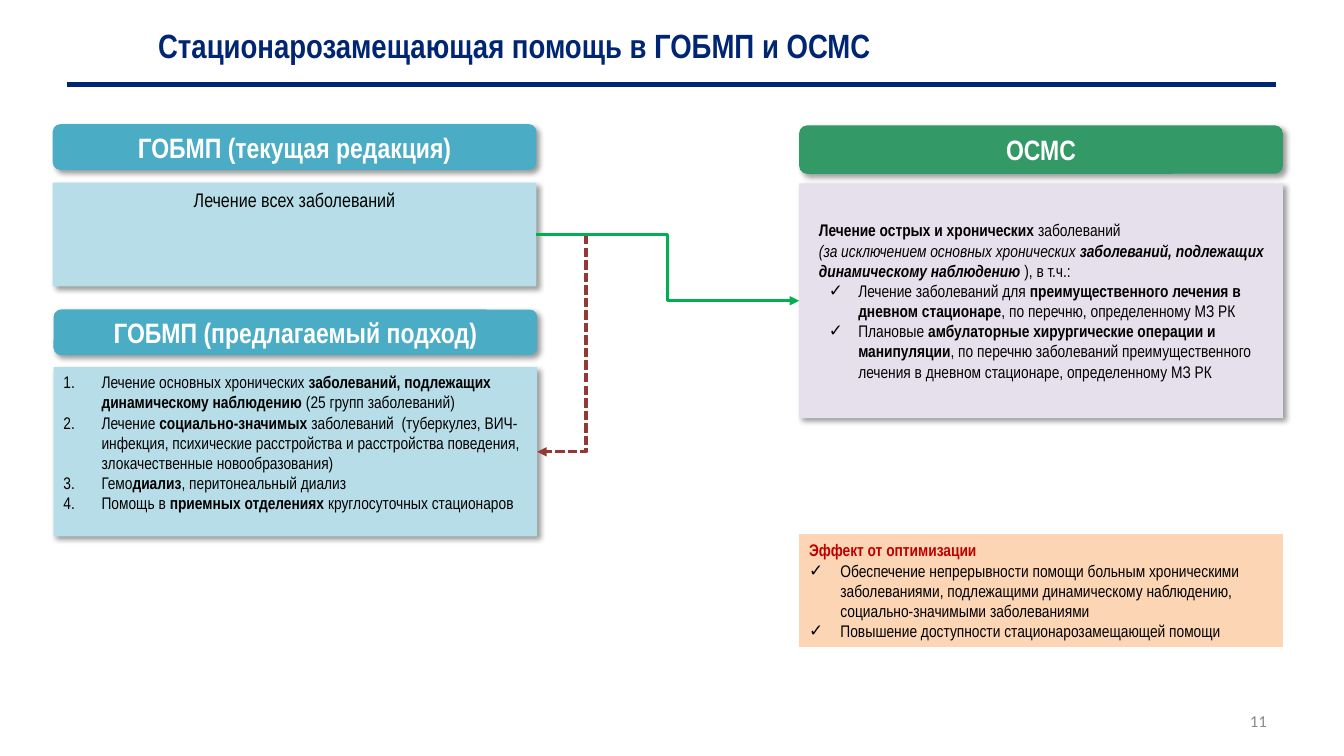
from lxml import etree
from pptx import Presentation
from pptx.dml.color import RGBColor
from pptx.enum.dml import MSO_LINE
from pptx.enum.shapes import MSO_CONNECTOR, MSO_SHAPE
from pptx.enum.text import MSO_ANCHOR, MSO_AUTO_SIZE, PP_ALIGN
from pptx.oxml.ns import qn
from pptx.util import Cm, Pt

RECT, ROUNDED = MSO_SHAPE.RECTANGLE, MSO_SHAPE.ROUNDED_RECTANGLE
STRAIGHT, ELBOW = MSO_CONNECTOR.STRAIGHT, MSO_CONNECTOR.ELBOW
TOP, MIDDLE = MSO_ANCHOR.TOP, MSO_ANCHOR.MIDDLE
LEFT, CENTER, RIGHT = PP_ALIGN.LEFT, PP_ALIGN.CENTER, PP_ALIGN.RIGHT
DASHED = MSO_LINE.SQUARE_DOT
LEFT_SIDE, RIGHT_SIDE = 1, 3

FONT = "Arial Narrow"
COLORS = {
    "navy": "002673", "teal": "4BACC6", "pale_teal": "B7DEE8",
    "green": "339966", "lilac": "E6E0EC", "peach": "FCD5B5",
    "arrow_green": "00B050", "arrow_brown": "953735", "red": "C00000",
    "white": "FFFFFF", "black": "000000", "gray": "8C8C8C",
}
COLUMN_WIDTH = 12.19
CURRENT_X, PROPOSED_X, INSURANCE_X = 1.33, 1.35, 20.14

# Paragraphs: (bullet, left indent and first-line indent in cm, spans).
# Spans: (text, style), where the style letters are b for bold and i for italic.
PROPOSED = [("number", 0.96, -0.96, spans) for spans in (
    [("Лечение основных хронических", ""),
     (" заболеваний, подлежащих динамическому наблюдению ", "b"),
     ("(25 групп заболеваний)", "")],
    [("Лечение ", ""), ("социально-значимых ", "b"),
     ("заболеваний  (туберкулез, ВИЧ-инфекция, психические расстройства и "
      "расстройства поведения, злокачественные новообразования)", "")],
    [("Гемо", ""), ("диализ", "b"), (", перитонеальный диализ", "")],
    [("Помощь в ", ""), ("приемных отделениях ", "b"),
     ("круглосуточных стационаров", "")],
)]
INSURANCE = [
    (None, 0.25, 0, [("Лечение острых и хронических ", "b"), ("заболеваний", "")]),
    (None, 0.25, 0, [
        ("(за исключением основных хронических", "i"),
        (" заболеваний, подлежащих динамическому наблюдению ", "bi"),
        ("), в т.ч.:", "")]),
    ("check", 1.24, -0.74, [
        ("Лечение заболеваний для ", ""),
        ("преимущественного лечения в дневном стационаре", "b"),
        (", по перечню, определенному МЗ РК", "")]),
    ("check", 1.24, -0.74, [
        ("Плановые ", ""),
        ("амбулаторные хирургические операции и манипуляции", "b"),
        (", по перечню заболеваний преимущественного лечения в дневном "
         "стационаре, определенному МЗ РК", "")]),
]
EFFECT = [
    (None, 0, 0, [("Эффект от оптимизации", "br")]),
    ("check", 0.79, -0.79, [
        ("Обеспечение непрерывности помощи больным хроническими заболеваниями, "
         "подлежащими динамическому наблюдению, социально-значимыми "
         "заболеваниями", "")]),
    ("check", 0.79, -0.79, [
        ("Повышение доступности стационарозамещающей помощи", "")]),
]


def rgb(name):
    return RGBColor.from_string(COLORS[name])


def add_xml(parent, tag, **attributes):
    return etree.SubElement(parent, qn(tag), attributes)


def plain(text, style=""):
    return [(None, 0, 0, [(text, style)])]


def set_bullet(para, kind, left, first):
    properties = para._p.get_or_add_pPr()
    properties.set("marL", str(Cm(left)))
    properties.set("indent", str(Cm(first)))
    if kind == "number":
        add_xml(properties, "a:buFont", typeface="+mj-lt")
        add_xml(properties, "a:buAutoNum", type="arabicPeriod")
    elif kind == "check":
        add_xml(properties, "a:buFont", typeface="Arial")
        add_xml(properties, "a:buChar", char="✓")
    else:
        add_xml(properties, "a:buNone")


def write(box, paragraphs, size, color="black", align=LEFT, anchor=MIDDLE, font=FONT):
    """Fill a box with formatted paragraphs; style letter r makes a span red."""
    frame = box.text_frame
    frame_format = {"word_wrap": True, "auto_size": MSO_AUTO_SIZE.NONE,
                    "vertical_anchor": anchor}
    for name, value in frame_format.items():
        setattr(frame, name, value)
    for index, (kind, left, first, spans) in enumerate(paragraphs):
        para = frame.add_paragraph() if index else frame.paragraphs[0]
        para.alignment = align
        set_bullet(para, kind, left, first)
        for text, style in spans:
            span = para.add_run()
            span.text = text
            span_format = {"name": font, "size": Pt(size),
                           "bold": "b" in style, "italic": "i" in style}
            for name, value in span_format.items():
                setattr(span.font, name, value)
            span.font.color.rgb = rgb("red" if "r" in style else color)


def add_shadow(box):
    effects = add_xml(box._element.spPr, "a:effectLst")
    shadow = add_xml(effects, "a:outerShdw", blurRad=str(Pt(4)), dist=str(Pt(3)),
                     dir="2700000", algn="tl", rotWithShape="0")
    shade = add_xml(shadow, "a:srgbClr", val=COLORS["black"])
    add_xml(shade, "a:alpha", val="40000")


def add_panel(page, kind, left, top, height, fill, shadow=True):
    box = page.shapes.add_shape(kind, Cm(left), Cm(top), Cm(COLUMN_WIDTH), Cm(height))
    box.fill.solid()
    box.fill.fore_color.rgb = rgb(fill)
    box.line.fill.background()
    if shadow:
        add_shadow(box)
    else:
        box.shadow.inherit = False
    return box


def add_header(page, text, left, top, height, fill):
    box = add_panel(page, ROUNDED, left, top, height, fill)
    write(box, plain(text, "b"), 20, "white", CENTER)


def add_line(page, kind, ends, color, width, dash=None):
    line = page.shapes.add_connector(kind, *(Cm(value) for value in ends))
    line.line.color.rgb = rgb(color)
    line.line.width = Pt(width)
    line.line.dash_style = dash
    add_xml(line._element.spPr, "a:effectLst")
    return line


def add_arrow(page, source, target, side, bend, color, dash=None):
    """Join two boxes with an elbow arrow that turns bend cm from its start."""
    arrow = add_line(page, ELBOW, (0, 0, 1, 1), color, 2.25, dash)
    arrow.begin_connect(source, RIGHT_SIDE)
    arrow.end_connect(target, side)
    add_xml(arrow.line._get_or_add_ln(), "a:tailEnd", type="triangle")
    guides = arrow._element.spPr.find(qn("a:prstGeom")).get_or_add_avLst()
    ratio = round(Cm(bend) / arrow.width * 100000)
    add_xml(guides, "a:gd", name="adj1", fmla=f"val {ratio}")


def add_title(page, text):
    title = page.shapes.title
    place = {"left": Cm(3.73), "top": Cm(0.36), "width": Cm(22), "height": Cm(1.55)}
    for name, value in place.items():
        setattr(title, name, value)
    write(title, plain(text, "b"), 24, "navy")
    add_line(page, STRAIGHT, (1.68, 2.13, 32.16, 2.13), "navy", 3)


def main():
    deck = Presentation()
    deck.slide_width, deck.slide_height = Cm(33.87), Cm(19.05)
    page = deck.slides.add_slide(deck.slide_layouts[5])
    add_title(page, "Стационарозамещающая помощь в ГОБМП и ОСМС")

    add_header(page, "ГОБМП (текущая редакция)", CURRENT_X, 3.13, 1.15, "teal")
    add_header(page, "ГОБМП (предлагаемый подход)", PROPOSED_X, 7.8, 1.15, "teal")
    add_header(page, "ОСМС", INSURANCE_X, 3.16, 1.22, "green")

    current = add_panel(page, RECT, CURRENT_X, 4.6, 2.62, "pale_teal")
    write(current, plain("Лечение всех заболеваний"), 14, align=CENTER, anchor=TOP)
    proposed = add_panel(page, RECT, PROPOSED_X, 9.25, 4.27, "pale_teal")
    write(proposed, PROPOSED, 12, anchor=TOP)
    insurance = add_panel(page, RECT, INSURANCE_X, 4.62, 5.92, "lilac")
    write(insurance, INSURANCE, 12)
    effect = add_panel(page, RECT, INSURANCE_X, 13.46, 2.84, "peach", shadow=False)
    write(effect, EFFECT, 12)

    add_arrow(page, current, proposed, RIGHT_SIDE, 1.25, "arrow_brown", DASHED)
    add_arrow(page, current, insurance, LEFT_SIDE, 3.31, "arrow_green")

    number = page.shapes.add_textbox(Cm(24.28), Cm(17.65), Cm(7.9), Cm(1.02))
    write(number, plain("11"), 12, "gray", RIGHT, font="Calibri")
    deck.save("out.pptx")


if __name__ == "__main__":
    main()
